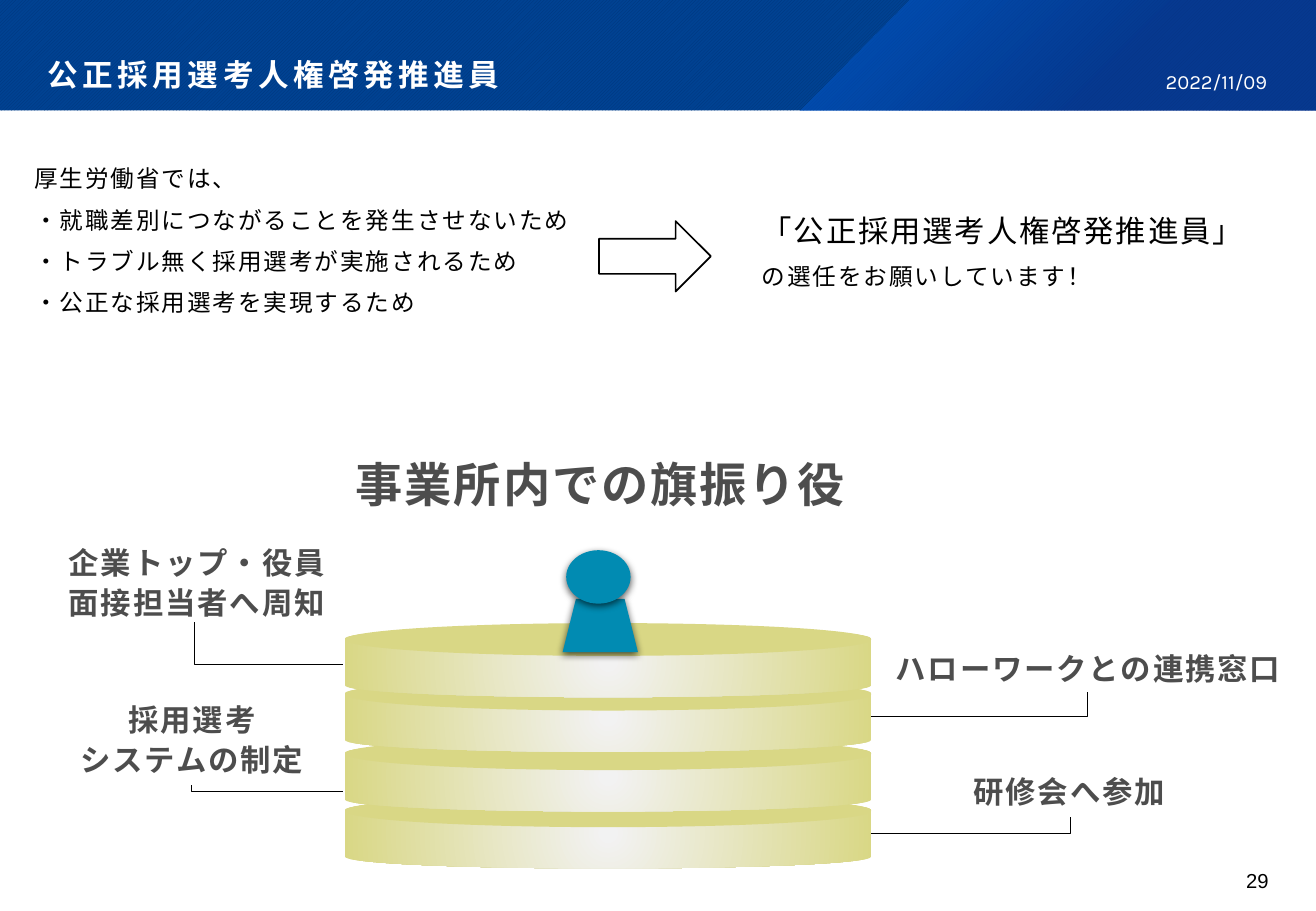
from lxml import etree
from pptx import Presentation, util as u
from pptx.dml.color import RGBColor
from pptx.enum import dml, shapes, text
from pptx.oxml.ns import qn

PX = 9144  # one px is 1/100 inch
COLORS = {"band": "004292", "band_stripe": "003579", "wedge": "0064DF", "wedge_dark": "0C338E",
          "white": "FFFFFF", "black": "000000", "label": "4D4D4D",
          "disk": "D9D785", "disk_glow": "F2F2F2", "person": "018BB2"}
RGB = {name: RGBColor.from_string(value) for name, value in COLORS.items()}
JAPANESE = "Noto Sans CJK JP"


def write(shape, box, lines, color, font=JAPANESE, bold=False, spacing=110, insets=(10, 5, 10, 5),
          anchor=text.MSO_ANCHOR.TOP, **paragraph_format):
    """Place a text shape and fill it with (text, size) lines."""
    for name, value in zip(("left", "top", "width", "height"), box):
        setattr(shape, name, value * PX)
    frame = shape.text_frame
    frame_format = {"word_wrap": True, "auto_size": text.MSO_AUTO_SIZE.NONE, "vertical_anchor": anchor}
    for side, value in zip(("left", "top", "right", "bottom"), insets):
        frame_format[f"margin_{side}"] = value * PX
    for name, value in frame_format.items():
        setattr(frame, name, value)
    frame.text = "\n".join(line for line, size in lines)
    for paragraph, (line, size) in zip(frame.paragraphs, lines):
        for name, value in {"space_before": u.Pt(0), **paragraph_format}.items():
            setattr(paragraph, name, value)
        run = paragraph.runs[0]
        for name, value in {"name": font, "size": u.Pt(size), "bold": bold}.items():
            setattr(run.font, name, value)
        run.font.color.rgb = RGB[color]
        properties = run._r.get_or_add_rPr()
        properties.set("spc", str(spacing))
        etree.SubElement(properties, qn("a:ea"), typeface=JAPANESE)


def radial_fill(shape, stops, focus):
    """Fill with a circular gradient of (position, colour, opacity) stops."""
    shape.fill.background()
    empty_fill = shape._element.spPr.find(qn("a:noFill"))
    gradient = etree.Element(qn("a:gradFill"), rotWithShape="1")
    stop_list = etree.SubElement(gradient, qn("a:gsLst"))
    for position, color, opacity in stops:
        stop = etree.SubElement(stop_list, qn("a:gs"), pos=str(position * 1000))
        tint = etree.SubElement(stop, qn("a:srgbClr"), val=COLORS[color])
        etree.SubElement(tint, qn("a:alpha"), val=str(opacity * 1000))
    circle = etree.SubElement(gradient, qn("a:path"), path="circle")
    sides = {side: str(value * 1000) for side, value in zip("ltrb", focus)}
    etree.SubElement(circle, qn("a:fillToRect"), **sides)
    empty_fill.getparent().replace(empty_fill, gradient)


presentation = Presentation()
presentation.slide_width, presentation.slide_height = 1083 * PX, 750 * PX
slide = presentation.slides.add_slide(presentation.slide_layouts[1])
canvas = slide.shapes
title, reasons = slide.placeholders
kinds = shapes.MSO_SHAPE

# Header band with its bright wedge
band = canvas.add_shape(kinds.RECTANGLE, 0, 0, 1083 * PX, 91 * PX)
band.fill.patterned()
band.fill.pattern = dml.MSO_PATTERN.DARK_UPWARD_DIAGONAL
band.fill.fore_color.rgb = RGB["band_stripe"]
band.fill.back_color.rgb = RGB["band"]
builder = canvas.build_freeform(749, 0, scale=PX)
builder.add_line_segments([(1083, 0), (1083, 91), (658, 91)], close=True)
wedge = builder.convert_to_shape()
radial_fill(wedge, [(0, "wedge", 50), (62, "wedge_dark", 55)], (0, 0, 100, 100))
for shape in (band, wedge):
    shape.line.fill.background()
    shape.shadow.inherit = False

# Title and list of reasons
for placeholder in (title, reasons):
    canvas._spTree.append(placeholder._element)
write(title, (0, 0, 1083, 91), [("公正採用選考人権啓発推進員", 18.1)], "white", font="Karla", bold=True,
      spacing=270, insets=(39, 36, 36, 14), anchor=text.MSO_ANCHOR.BOTTOM,
      alignment=text.PP_ALIGN.LEFT, line_spacing=0.9)
write(reasons, (18, 128, 466, 139),
      [("厚生労働省では、", 14), ("・就職差別につながることを発生させないため", 14),
       ("・トラブル無く採用選考が実施されるため", 14), ("・公正な採用選考を実現するため", 14)],
      "black", line_spacing=1.1, space_after=u.Pt(6))
for paragraph in reasons.text_frame.paragraphs:
    properties = paragraph._p.get_or_add_pPr()
    properties.set("marL", "0")
    properties.set("indent", "0")
    etree.SubElement(properties, qn("a:buNone"))

# Arrow to the request
arrow = canvas.add_shape(kinds.RIGHT_ARROW, 493 * PX, 182 * PX, 92 * PX, 58 * PX)
arrow.fill.background()
arrow.line.color.rgb = RGB["black"]
arrow.line.width = u.Pt(1)
arrow.shadow.inherit = False
write(canvas.add_textbox(0, 0, 0, 0), (617, 167, 449, 78),
      [("「公正採用選考人権啓発推進員」", 18), ("の選任をお願いしています！", 14)],
      "black", line_spacing=1.1, space_after=u.Pt(6))

# Stack of disks, bottom to top, with the person standing on it
pieces = []
for top in (657, 610, 561, 516):
    pieces += [(kinds.FLOWCHART_MAGNETIC_DISK, (284, top, 433, 58), "disk"),
               (kinds.OVAL, (284, top - 3, 433, 27), "disk")]
pieces += [(kinds.TRAPEZOID, (463, 493, 62, 44), "person"),
           (kinds.OVAL, (466, 453, 53, 44), "person")]
for kind, box, color in pieces:
    shape = canvas.add_shape(kind, *(value * PX for value in box))
    shape.line.fill.background()
    shape.shadow.inherit = False
    if kind == kinds.FLOWCHART_MAGNETIC_DISK:
        radial_fill(shape, [(2, "disk_glow", 100), (100, "disk", 100)], (50, 50, 50, 50))
    else:
        shape.fill.solid()
        shape.fill.fore_color.rgb = RGB[color]
    if color == "person":
        effects = shape._element.spPr.find(qn("a:effectLst"))
        shadow = etree.SubElement(effects, qn("a:outerShdw"), blurRad=str(u.Pt(4.5)),
                                  dist=str(u.Pt(1.5)), dir="5400000", rotWithShape="0")
        shade = etree.SubElement(shadow, qn("a:srgbClr"), val=COLORS["black"])
        etree.SubElement(shade, qn("a:alpha"), val="63000")

# Heading and role labels
labels = [((234, 365, 520, 62), 28, ["事業所内での旗振り役"]),
          ((22, 440, 280, 77), 18, ["企業トップ・役員", "面接担当者へ周知"]),
          ((18, 569, 280, 77), 18, ["採用選考", "システムの制定"]),
          ((725, 527, 341, 43), 18, ["ハローワークとの連携窓口"]),
          ((740, 629, 280, 43), 18, ["研修会へ参加"])]
for box, size, lines in labels:
    write(canvas.add_textbox(0, 0, 0, 0), box, [(line, size) for line in lines], "label",
          bold=True, alignment=text.PP_ALIGN.CENTER, line_spacing=1.1)

# Elbow lines from each disk to its label
for ends in ((282, 547, 160, 512), (717, 590, 895, 570), (282, 652, 158, 646), (717, 686, 881, 673)):
    elbow = canvas.add_connector(shapes.MSO_CONNECTOR.ELBOW, *(value * PX for value in ends))
    elbow.line.color.rgb = RGB["black"]
    elbow.line.width = u.Pt(0.5)
    properties = elbow._element.spPr
    properties.find(qn("a:prstGeom")).set("prst", "bentConnector2")
    etree.SubElement(properties, qn("a:effectLst"))

# Date and page number
write(canvas.add_textbox(0, 0, 0, 0), (799, 47, 244, 40), [("2022/11/09", 12)], "white", font="Karla",
      spacing=0, insets=(0, 0, 0, 0), anchor=text.MSO_ANCHOR.MIDDLE, alignment=text.PP_ALIGN.RIGHT)
write(canvas.add_textbox(0, 0, 0, 0), (975, 715, 69, 30), [("29", 12)], "black", font="Arial",
      spacing=0, insets=(0, 0, 0, 0), alignment=text.PP_ALIGN.RIGHT)

presentation.save("out.pptx")
